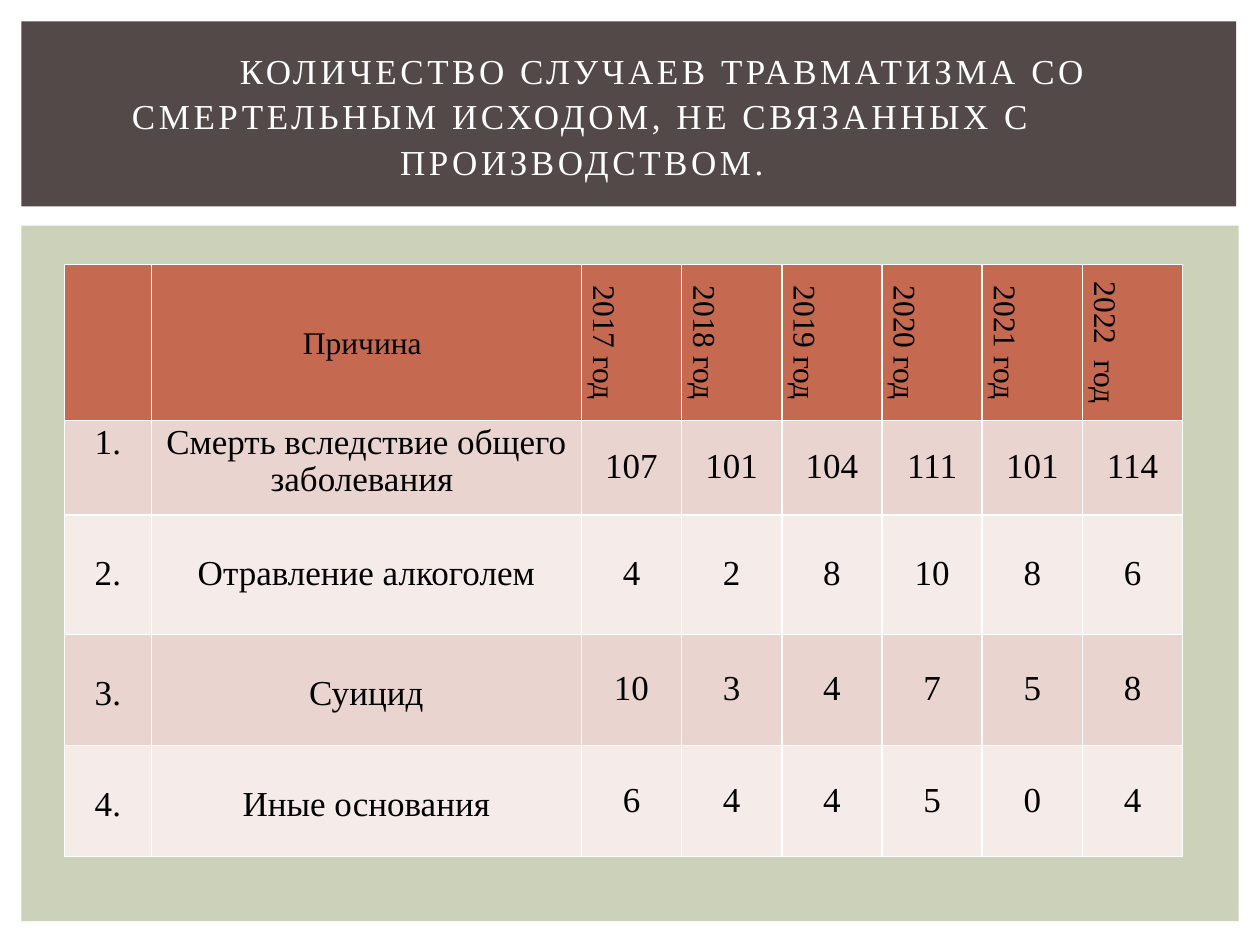
from dataclasses import dataclass

from pptx import Presentation, util as u
from pptx.dml.color import RGBColor
from pptx.enum import shapes, text


@dataclass(frozen=True)
class Theme:
    font: str = "Times New Roman"
    white: str = "FFFFFF"
    black: str = "000000"
    band: str = "534949"
    panel: str = "CCD1B9"
    head: str = "C66951"
    rows: tuple = ("EAD4D0", "F5EBE9")
    small: int = 18
    large: int = 20
    lead: int = 21


TITLE = ("КОЛИЧЕСТВО СЛУЧАЕВ ТРАВМАТИЗМА СО СМЕРТЕЛЬНЫМ ИСХОДОМ, "
         "НЕ СВЯЗАННЫХ С ПРОИЗВОДСТВОМ.")
HEAD = ["", "Причина ", "2017 год", "2018 год", "2019 год", "2020 год",
        "2021 год", "2022  год"]
CAUSES = [
    ("Смерть вследствие общего заболевания ", 107, 101, 104, 111, 101, 114),
    ("Отравление алкоголем", 4, 2, 8, 10, 8, 6),
    ("Суицид", 10, 3, 4, 7, 5, 8),
    ("Иные основания", 6, 4, 4, 5, 0, 4),
]
WIDTHS = [1.75, 8.67] + [2.02] * 6
HEIGHTS = [3.15, 1.9, 2.41, 2.24, 2.24]


class Deck:
    def __init__(self, theme):
        self.theme = theme
        self.prs = Presentation()
        self.prs.slide_width, self.prs.slide_height = u.Cm(25.4), u.Cm(19.05)
        self.slide = self.prs.slides.add_slide(self.prs.slide_layouts[5])

    def rect(self, x, y, w, h, color):
        box = self.slide.shapes.add_shape(
            shapes.MSO_SHAPE.RECTANGLE, *map(u.Cm, (x, y, w, h)))
        box.shadow.inherit = False
        box.fill.solid()
        box.fill.fore_color.rgb = RGBColor.from_string(color)
        box.line.fill.background()

    def style(self, para, size, color, lead):
        para.alignment = text.PP_ALIGN.CENTER
        para.line_spacing = u.Pt(lead)
        font = para.font
        font.name, font.size, font.bold = self.theme.font, u.Pt(size), False
        font.color.rgb = RGBColor.from_string(color)

    def title(self, words, x, y, w, h):
        """Fill the title, set its first line in and bring it to the front."""
        box = self.slide.shapes.title
        box.left, box.top, box.width, box.height = map(u.Cm, (x, y, w, h))
        frame = box.text_frame
        frame.text = words
        frame.word_wrap = True
        frame.auto_size = text.MSO_AUTO_SIZE.NONE
        frame.vertical_anchor = text.MSO_ANCHOR.MIDDLE
        para = frame.paragraphs[0]
        self.style(para, self.theme.large, self.theme.white, 26)
        props = para._p.get_or_add_pPr()
        props.set("marL", "0")
        props.set("indent", str(u.Cm(3.3)))
        para.runs[0].font._element.set("spc", "200")
        self.slide.shapes._spTree.append(box._element)

    def cell(self, cell, words, fill, size):
        cell.fill.solid()
        cell.fill.fore_color.rgb = RGBColor.from_string(fill)
        cell.margin_left = cell.margin_right = u.Cm(0.25)
        cell.margin_top = cell.margin_bottom = u.Cm(0.1)
        cell.vertical_anchor = text.MSO_ANCHOR.MIDDLE
        cell.text = str(words)
        self.style(cell.text_frame.paragraphs[0], size, self.theme.black,
                   self.theme.lead)

    def table(self, head, rows, x, y, widths, heights):
        look = self.theme
        grid = self.slide.shapes.add_table(
            len(heights), len(widths), u.Cm(x), u.Cm(y),
            u.Cm(sum(widths)), u.Cm(sum(heights))).table
        for col, width in zip(grid.columns, widths):
            col.width = u.Cm(width)
        for row, height in zip(grid.rows, heights):
            row.height = u.Cm(height)
        for c, words in enumerate(head):
            cell = grid.cell(0, c)
            self.cell(cell, words, look.head, look.small)
            if c > 1:
                cell._tc.get_or_add_tcPr().set("vert", "vert")
        for r, (cause, *counts) in enumerate(rows, 1):
            for c, words in enumerate([f"{r}.", cause, *counts]):
                cell = grid.cell(r, c)
                self.cell(cell, words, look.rows[(r - 1) % 2], look.large)
                if c < 2:
                    cell.vertical_anchor = text.MSO_ANCHOR.TOP
                    if r > 1:
                        cell.margin_top = u.Cm(0.1) + u.Pt(look.lead)


def main():
    theme = Theme()
    deck = Deck(theme)
    deck.rect(0.43, 4.55, 24.54, 14.02, theme.panel)
    deck.rect(0.43, 0.43, 24.49, 3.73, theme.band)
    deck.title(TITLE, 0.3, 0.43, 22.86, 3.73)
    deck.table(HEAD, CAUSES, 1.3, 5.33, WIDTHS, HEIGHTS)
    deck.prs.save("out.pptx")


if __name__ == "__main__":
    main()
